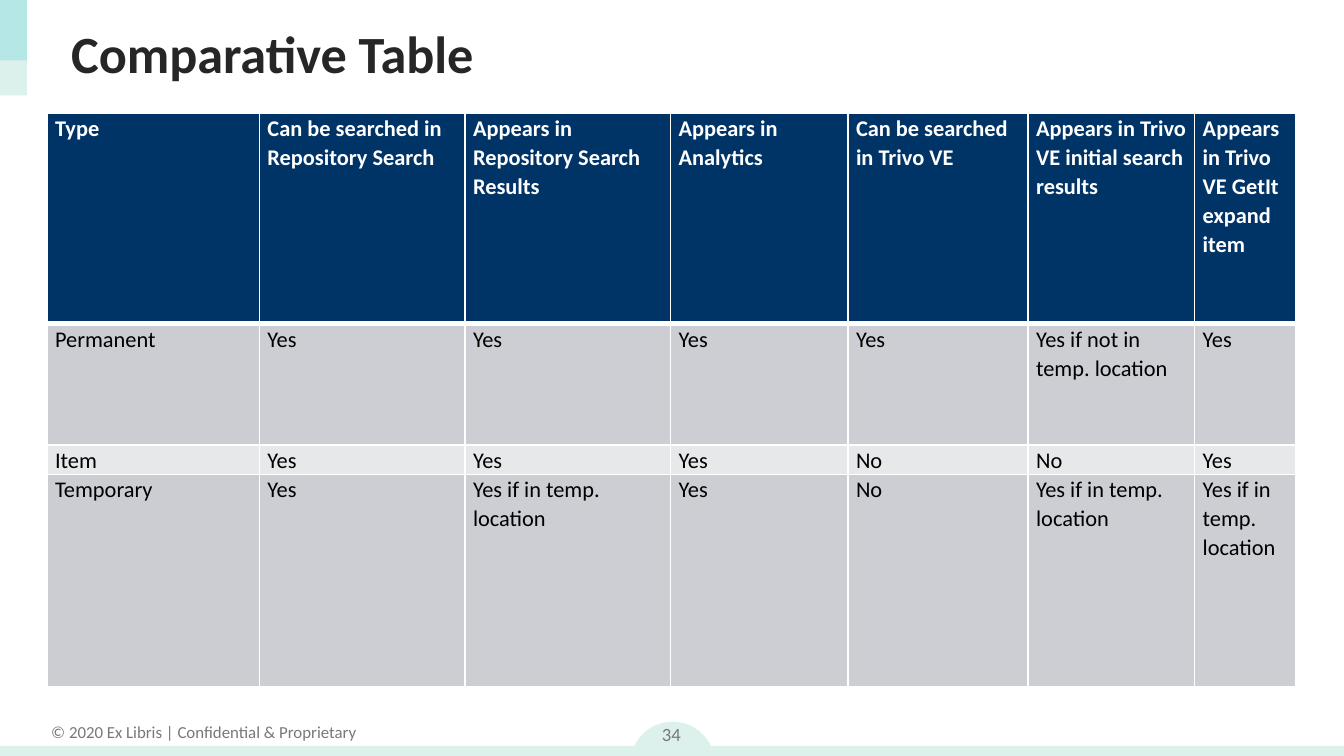
from lxml.etree import SubElement
from pptx import Presentation
from pptx.dml.color import RGBColor
from pptx.enum.shapes import MSO_SHAPE
from pptx.enum.text import MSO_ANCHOR, PP_ALIGN
from pptx.oxml.ns import qn
from pptx.util import Inches, Pt

NAVY, MINT, TEAL = "003466", "DCF1EC", "50CFDA"
WHITE, BLACK, CHARCOAL, GRAY = "FFFFFF", "000000", "262626", "787878"
LABEL_BAND, DARK_BAND, LIGHT_BAND = "CBCDD3", "CCCED3", "E7E8EA"

COLUMN_WIDTHS = [1.58, 1.53, 1.53, 1.32, 1.34, 1.24, 0.75]
ROW_HEIGHTS = [1.57, 0.9, 0.22, 1.58]
ROWS = [
    ["Type", "Can be searched in Repository Search", "Appears in Repository Search Results",
     "Appears in Analytics", "Can be searched in Trivo VE",
     "Appears in Trivo VE initial search results", "Appears in Trivo VE GetIt expand item"],
    ["Permanent", "Yes", "Yes", "Yes", "Yes", "Yes if not in temp. location", "Yes"],
    ["Item", "Yes", "Yes", "Yes", "No", "No", "Yes"],
    ["Temporary", "Yes", "Yes if in temp. location", "Yes", "No",
     "Yes if in temp. location", "Yes if in temp. location"],
]


def color(value):
    return RGBColor.from_string(value)


class SlideBuilder:
    font_name = "Calibri"

    def __init__(self, slide):
        self.slide = slide

    def style(self, para, size, ink, bold=False):
        para.font.name = self.font_name
        para.font.size = Pt(size)
        para.font.bold = bold
        para.font.color.rgb = color(ink)

    def shape(self, kind, left, top, width, height, fill, opacity=None):
        shape = self.slide.shapes.add_shape(
            kind, Inches(left), Inches(top), Inches(width), Inches(height))
        shape.shadow.inherit = False
        shape.line.fill.background()
        shape.fill.solid()
        shape.fill.fore_color.rgb = color(fill)
        if opacity is not None:
            tint = shape.fill._xPr.find(qn("a:solidFill"))[0]
            SubElement(tint, qn("a:alpha"), val=str(opacity * 1000))

    def title(self, text, left, top, width, height):
        title = self.slide.shapes.title
        title.left, title.top = Inches(left), Inches(top)
        title.width, title.height = Inches(width), Inches(height)
        title.text_frame.text = text
        title.text_frame.vertical_anchor = MSO_ANCHOR.MIDDLE
        para = title.text_frame.paragraphs[0]
        para.alignment = PP_ALIGN.LEFT
        self.style(para, 28, CHARCOAL, bold=True)

    def text(self, text, left, top, width, height, size, anchor=MSO_ANCHOR.TOP, wrap=True):
        box = self.slide.shapes.add_textbox(
            Inches(left), Inches(top), Inches(width), Inches(height))
        frame = box.text_frame
        frame.word_wrap = wrap
        frame.vertical_anchor = anchor
        frame.text = text
        para = frame.paragraphs[0]
        para.alignment = PP_ALIGN.CENTER
        self.style(para, size, GRAY)

    def borders(self, cell, row):
        widths = {"L": 1, "R": 1, "T": 3 if row == 1 else 1, "B": 3 if row == 0 else 1}
        properties = cell._tc.get_or_add_tcPr()
        for side, width in widths.items():
            line = SubElement(properties, qn(f"a:ln{side}"), w=str(Pt(width)))
            SubElement(SubElement(line, qn("a:solidFill")), qn("a:srgbClr"), val=WHITE)

    def cell(self, cell, text, row, column):
        cell.margin_left = cell.margin_right = Inches(0.06)
        cell.margin_top = cell.margin_bottom = 0
        self.borders(cell, row)
        if row == 0:
            fill = NAVY
        elif row % 2 == 0:
            fill = LIGHT_BAND
        else:
            fill = LABEL_BAND if column == 0 else DARK_BAND
        cell.fill.solid()
        cell.fill.fore_color.rgb = color(fill)
        cell.text = text
        para = cell.text_frame.paragraphs[0]
        para.line_spacing = 1.07
        self.style(para, 12, WHITE if row == 0 else BLACK, bold=row == 0)

    def table(self, rows, left, top, widths, heights):
        table = self.slide.shapes.add_table(
            len(rows), len(widths), Inches(left), Inches(top),
            Inches(sum(widths)), Inches(sum(heights))).table
        for column, width in zip(table.columns, widths):
            column.width = Inches(width)
        for row, height in zip(table.rows, heights):
            row.height = Inches(height)
        for row, texts in enumerate(rows):
            for column, text in enumerate(texts):
                self.cell(table.cell(row, column), text, row, column)


def main():
    deck = Presentation()
    deck.slide_width = Inches(10)
    deck.slide_height = Inches(10) * 9 // 16
    page = SlideBuilder(deck.slides.add_slide(deck.slide_layouts[5]))

    page.shape(MSO_SHAPE.OVAL, 4.69, 5.37, 0.63, 0.63, MINT)
    page.text("© 2020 Ex Libris | Confidential & Proprietary",
              0.27, 5.32, 2.49, 0.25, 9, wrap=False)
    page.shape(MSO_SHAPE.RECTANGLE, 0, 5.55, 10, 0.11, MINT)
    page.shape(MSO_SHAPE.RECTANGLE, 0, 0, 0.2, 0.71, MINT)
    page.shape(MSO_SHAPE.RECTANGLE, 0, 0, 0.2, 0.45, TEAL, opacity=27)
    page.text("34", 4.7, 5.26, 0.59, 0.4, 10, anchor=MSO_ANCHOR.MIDDLE)
    page.title("Comparative Table", 0.43, 0.08, 9.21, 0.63)
    page.table(ROWS, 0.35, 0.84, COLUMN_WIDTHS, ROW_HEIGHTS)

    deck.save("out.pptx")


if __name__ == "__main__":
    main()
